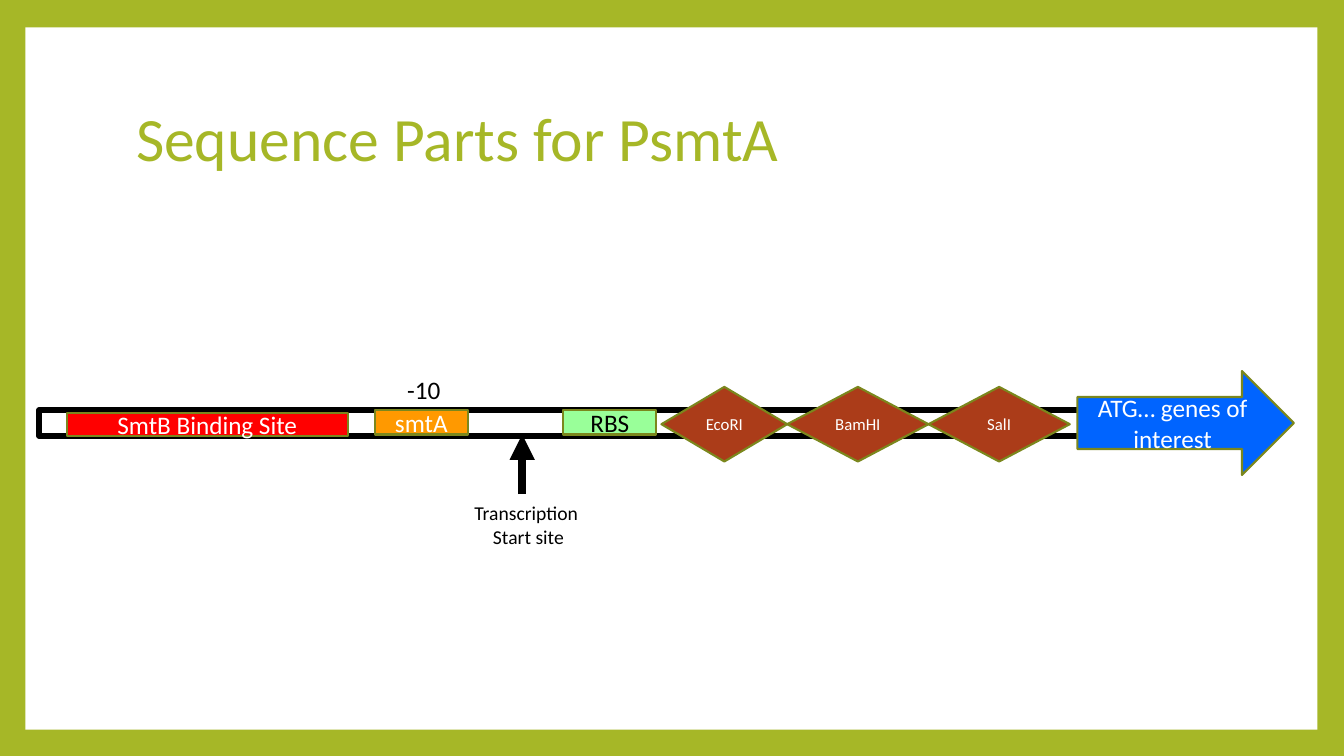
from dataclasses import dataclass

from lxml import etree
from pptx import Presentation
from pptx import util as u
from pptx.dml.color import RGBColor
from pptx.enum import shapes, text
from pptx.oxml.ns import qn
from pptx.util import Cm

SHAPE = shapes.MSO_SHAPE
CENTER = text.PP_ALIGN.CENTER


@dataclass(frozen=True)
class Theme:
    font: str = "Calibri"
    lime: str = "A6B727"
    outline: str = "7B871D"
    white: str = "FFFFFF"
    black: str = "000000"
    operator: str = "FF0000"
    promoter: str = "FF9900"
    ribosome: str = "99FF99"
    restriction: str = "AB3C19"
    gene: str = "0064FF"
    title_size: int = 44
    label_size: int = 18
    note_size: int = 14
    site_size: int = 12


THEME = Theme()


def rgb(color):
    return RGBColor.from_string(color)


def write(frame, words, size, color, align=None):
    frame.text = words
    frame.word_wrap = True
    for paragraph in frame.paragraphs:
        paragraph.alignment = align
        for run in paragraph.runs:
            run.font.name = THEME.font
            run.font.size = u.Pt(size)
            run.font.color.rgb = rgb(color)


def add_block(slide, kind, box, fill, line=None, weight=1.5):
    block = slide.shapes.add_shape(kind, *map(Cm, box))
    block.shadow.inherit = False
    block.fill.solid()
    block.fill.fore_color.rgb = rgb(fill)
    if line:
        block.line.color.rgb = rgb(line)
        block.line.width = u.Pt(weight)
    else:
        block.line.fill.background()
    return block


def add_part(slide, kind, box, words, fill, size=THEME.label_size, color=THEME.white):
    """Add one labelled part of the sequence."""
    part = add_block(slide, kind, box, fill, THEME.outline)
    part.text_frame.vertical_anchor = text.MSO_ANCHOR.MIDDLE
    write(part.text_frame, words, size, color, CENTER)


def add_label(slide, box, words, size, color=THEME.black, align=None):
    label = slide.shapes.add_textbox(*map(Cm, box))
    write(label.text_frame, words, size, color, align)
    return label.text_frame


def add_arrow(slide, x, start_y, end_y):
    arrow = slide.shapes.add_connector(
        shapes.MSO_CONNECTOR.STRAIGHT, Cm(x), Cm(start_y), Cm(x), Cm(end_y))
    arrow.line.color.rgb = rgb(THEME.black)
    arrow.line.width = u.Pt(6)
    etree.SubElement(arrow.line._get_or_add_ln(), qn("a:tailEnd"), type="triangle")
    etree.SubElement(arrow._element.spPr, qn("a:effectLst"))


def add_restriction_sites(slide, left):
    """Place the diamonds tip to tip."""
    for enzyme, width in (("EcoRI", 3.17), ("BamHI", 3.56), ("SalI", 3.56)):
        add_part(slide, SHAPE.DIAMOND, (left, 9.75, width, 1.88), enzyme,
                 THEME.restriction, THEME.site_size)
        left += width


def main():
    deck = Presentation()
    deck.slide_width, deck.slide_height = Cm(33.87), Cm(19.05)
    slide = deck.slides.add_slide(deck.slide_layouts[6])
    slide.background.fill.solid()
    slide.background.fill.fore_color.rgb = rgb(THEME.lime)
    add_block(slide, SHAPE.RECTANGLE, (0.64, 0.69, 32.56, 17.7), THEME.white)

    title = add_label(slide, (3.18, 1.7, 27.43, 3.76), "Sequence Parts for PsmtA",
                      THEME.title_size, THEME.lime)
    title.vertical_anchor = text.MSO_ANCHOR.MIDDLE
    title.paragraphs[0].line_spacing = 0.9

    add_block(slide, SHAPE.RECTANGLE, (0.99, 10.34, 29.82, 0.64),
              THEME.white, THEME.black, 4.5)
    add_part(slide, SHAPE.RECTANGLE, (1.68, 10.41, 7.09, 0.58),
             "SmtB Binding Site", THEME.operator)
    add_part(slide, SHAPE.RECTANGLE, (9.45, 10.34, 2.34, 0.61), "smtA", THEME.promoter)
    add_label(slide, (10.01, 9.3, 1.75, 1.04), "-10", THEME.label_size)
    add_part(slide, SHAPE.RECTANGLE, (14.2, 10.34, 2.34, 0.61), "RBS",
             THEME.ribosome, color=THEME.black)
    add_arrow(slide, 13.16, 12.45, 10.95)
    add_label(slide, (10.92, 12.5, 4.8, 1.45), "Transcription \nStart site",
              THEME.note_size, align=CENTER)
    add_restriction_sites(slide, 16.67)
    add_part(slide, SHAPE.RIGHT_ARROW, (27.15, 9.35, 5.46, 2.62),
             "ATG… genes of interest", THEME.gene)

    deck.save("out.pptx")


if __name__ == "__main__":
    main()
